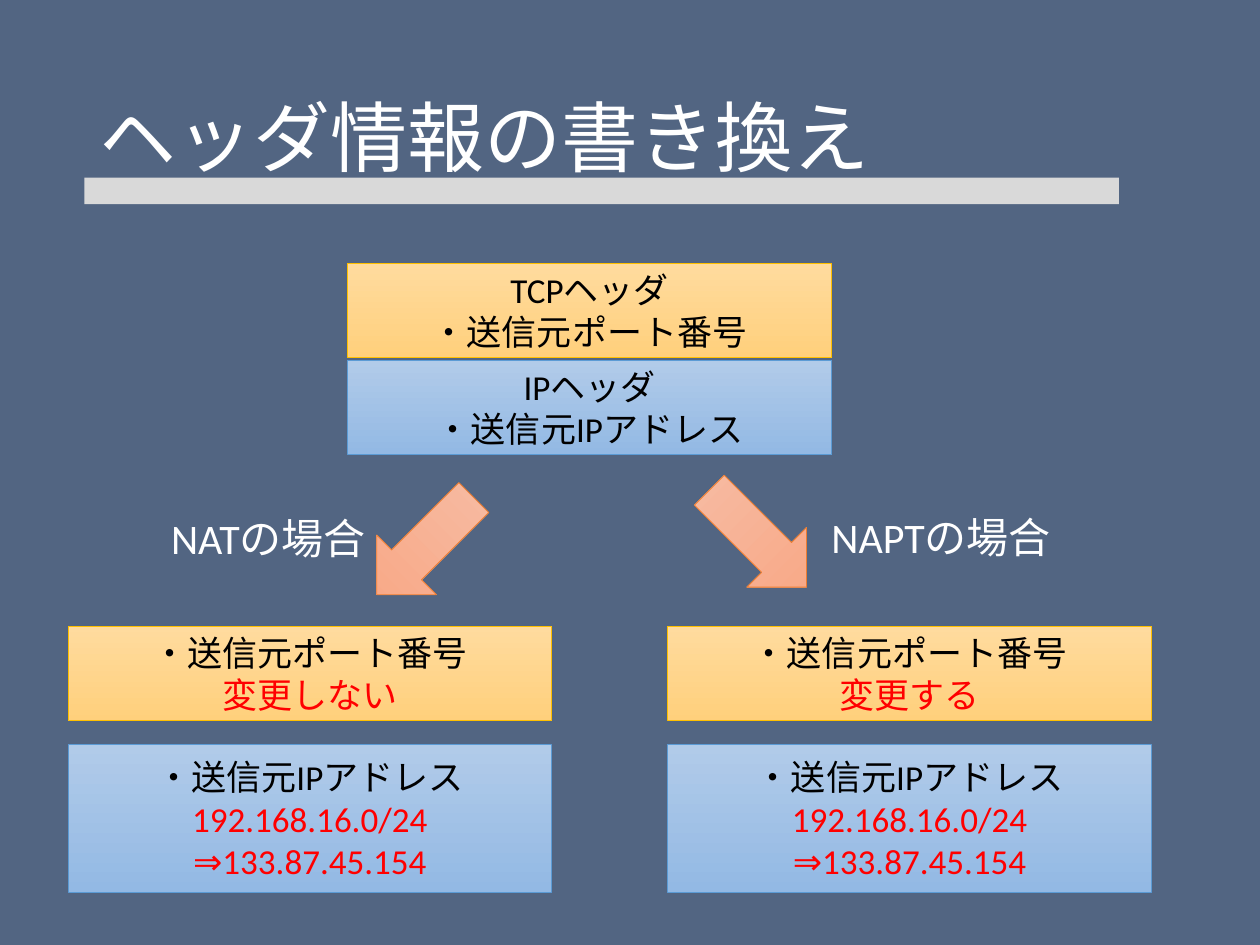
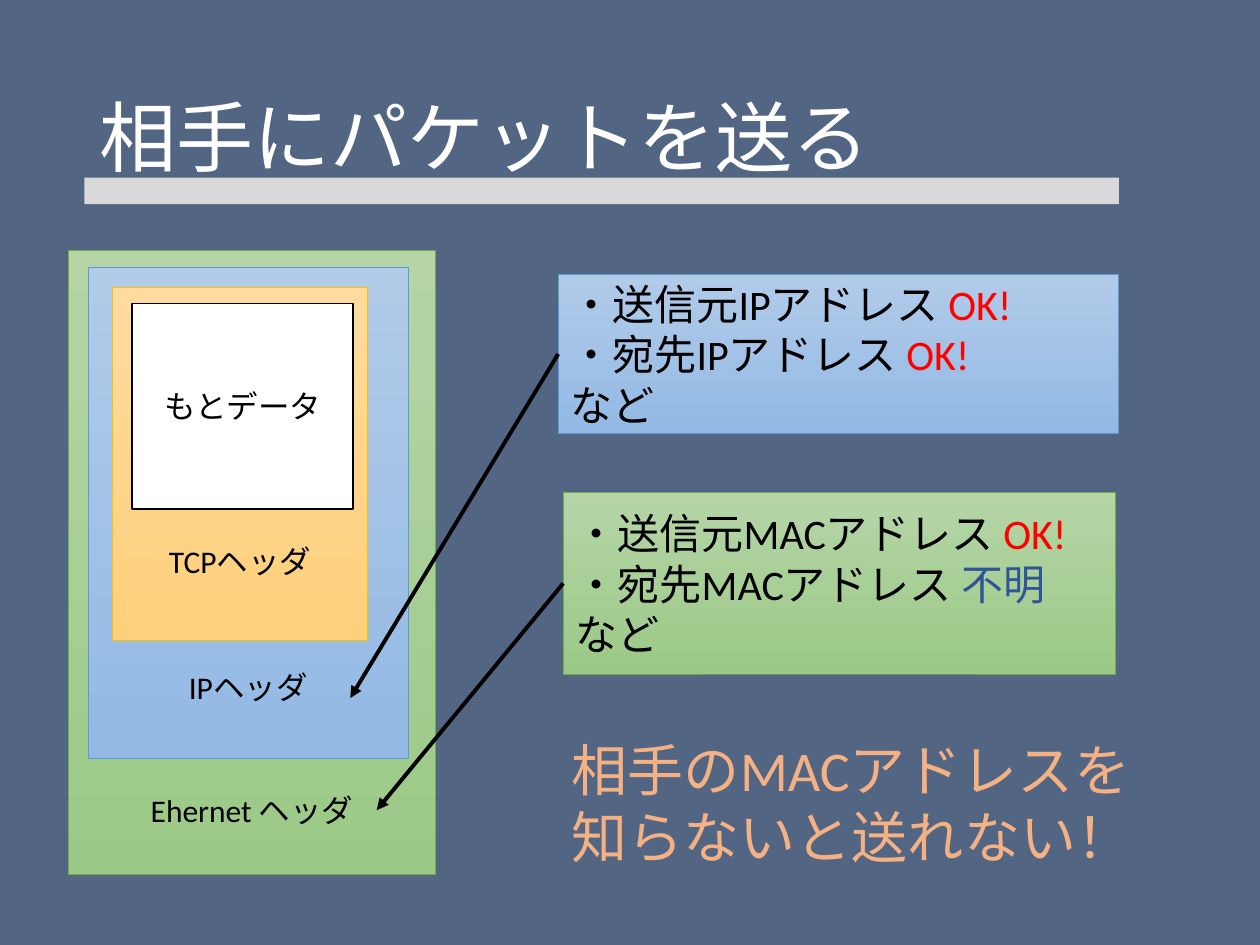
from dataclasses import dataclass

from lxml import etree
from pptx import Presentation
from pptx.dml.color import RGBColor
from pptx.enum.shapes import MSO_CONNECTOR, MSO_SHAPE
from pptx.enum.text import MSO_ANCHOR, PP_ALIGN
from pptx.oxml.ns import qn
from pptx.util import Inches, Pt

RECT, DOWN_ARROW = MSO_SHAPE.RECTANGLE, MSO_SHAPE.DOWN_ARROW
STRAIGHT = MSO_CONNECTOR.STRAIGHT
TOP, MIDDLE, BOTTOM = MSO_ANCHOR.TOP, MSO_ANCHOR.MIDDLE, MSO_ANCHOR.BOTTOM
LEFT, CENTER = PP_ALIGN.LEFT, PP_ALIGN.CENTER


@dataclass(frozen=True)
class Theme:
    font: str = "Calibri"
    background: str = "526582"
    band: str = "D9D9D9"
    white: str = "FFFFFF"
    black: str = "000000"
    changed: str = "FF0000"
    unknown: str = "2F5597"
    warning: str = "F4B183"
    tcp: tuple = ("FFDB9E", "FFD07C", "FFC000")
    ip: tuple = ("B1CBE9", "93B9E4", "5B9BD5")
    ethernet: tuple = ("B5D5A7", "9CC987", "70AD47")
    arrow: tuple = ("F7BDA5", "F8A582", "ED7D31")
    title_size: int = 44
    warning_size: int = 32
    detail_size: int = 24
    header_size: int = 20
    layer_size: int = 18


T = Theme()


def rgb(color):
    return RGBColor.from_string(color)


def write(sp, lines, size, color=T.black, align=LEFT, anchor=TOP):
    tf = sp.text_frame
    tf.word_wrap = True
    tf.vertical_anchor = anchor
    for i, line in enumerate(lines):
        p = tf.add_paragraph() if i else tf.paragraphs[0]
        p.alignment = align
        p.font.name = T.font
        p.font.size = Pt(size)
        p.font.color.rgb = rgb(color)
        for run in [line] if isinstance(line, str) else line:
            text, run_color = (run, color) if isinstance(run, str) else run
            r = p.add_run()
            r.text = text
            r.font.color.rgb = rgb(run_color)
    return tf


def add_text(s, box, lines, size, color, anchor=TOP):
    sp = s.shapes.add_textbox(*map(Inches, box))
    return write(sp, lines, size, color, anchor=anchor)


def add_plain(s, box, fill, line=None):
    sp = s.shapes.add_shape(RECT, *map(Inches, box))
    sp.shadow.inherit = False
    sp.fill.solid()
    sp.fill.fore_color.rgb = rgb(fill)
    if line:
        sp.line.color.rgb = rgb(line)
        sp.line.width = Pt(1)
    else:
        sp.line.fill.background()
    return sp


def add_gradient(s, box, colors, kind=RECT):
    start, end, line = colors
    sp = s.shapes.add_shape(kind, *map(Inches, box))
    sp.shadow.inherit = False
    sp.fill.gradient()
    sp.fill.gradient_angle = 270
    for stop, color in zip(sp.fill.gradient_stops, (start, end)):
        stop.color.rgb = rgb(color)
    sp.line.color.rgb = rgb(line)
    sp.line.width = Pt(0.5)
    return sp


def add_pointer(s, start, end):
    line = s.shapes.add_connector(STRAIGHT, *map(Inches, (*start, *end)))
    line.line.color.rgb = rgb(T.black)
    line.line.width = Pt(2.25)
    etree.SubElement(line.line._get_or_add_ln(), qn("a:tailEnd"), type="triangle")
    etree.SubElement(line._element.spPr, qn("a:effectLst"))


def add_titled_slide(prs, title):
    s = prs.slides.add_slide(prs.slide_layouts[6])
    s.background.fill.solid()
    s.background.fill.fore_color.rgb = rgb(T.background)
    tf = add_text(s, (0.69, 0.4, 8.62, 1.45), [title], T.title_size, T.white, MIDDLE)
    tf.paragraphs[0].line_spacing = 0.9
    add_plain(s, (0.67, 1.41, 8.21, 0.21), T.band)
    return s


def header_pair(s, box, tcp_lines, ip_lines, ip_height, gap):
    x, y, w, tcp_height = box
    ip_top = y + tcp_height + gap
    for top, height, colors, lines in (
        (y, tcp_height, T.tcp, tcp_lines),
        (ip_top, ip_height, T.ip, ip_lines),
    ):
        sp = add_gradient(s, (x, top, w, height), colors)
        write(sp, lines, T.header_size, align=CENTER, anchor=MIDDLE)


def case_branch(s, arrow_box, rotation, label_box, label):
    add_gradient(s, arrow_box, T.arrow, DOWN_ARROW).rotation = rotation
    add_text(s, label_box, [label], T.detail_size, T.white)


def layer_stack(s, box):
    x, y, w, h = box
    layers = (
        ((0, 0, w, h), T.ethernet, "Ehernet ヘッダ", 0.36),
        ((0.16, 0.13, 2.54, 3.9), T.ip, "IPヘッダ", 0.42),
        ((0.35, 0.29, 2.03, 2.8), T.tcp, "TCPヘッダ", 0.48),
    )
    for (dx, dy, width, height), colors, label, inset in layers:
        sp = add_gradient(s, (x + dx, y + dy, width, height), colors)
        tf = write(sp, [label], T.layer_size, align=CENTER, anchor=BOTTOM)
        tf.margin_bottom = Inches(inset)
    data = add_plain(s, (x + 0.51, y + 0.42, 1.75, 1.63), T.white, T.black)
    write(data, ["もとデータ"], T.layer_size, align=CENTER, anchor=MIDDLE)


def address_detail(s, box, colors, protocol, destination_state, target):
    x, y, w, h = box
    lines = [
        [f"・送信元{protocol}アドレス ", ("OK!", T.changed)],
        [f"・宛先{protocol}アドレス ", destination_state],
        "など",
    ]
    sp = add_gradient(s, box, colors)
    write(sp, lines, T.detail_size, anchor=MIDDLE)
    add_pointer(s, (x, y + h / 2), target)


def rewrite_slide(prs):
    s = add_titled_slide(prs, "ヘッダ情報の書き換え")
    port, address = "・送信元ポート番号", "・送信元IPアドレス"
    header_pair(s, (2.76, 2.09, 3.84, 0.75), ["TCPヘッダ", port],
                ["IPヘッダ", address], 0.75, 0.02)
    case_branch(s, (3.04, 3.79, 0.67, 1.09), 45, (1.26, 4.02, 2.48, 0.5), "NATの場合")
    case_branch(s, (5.68, 3.73, 0.67, 1.09), 315, (6.5, 4.01, 2.48, 0.5), "NAPTの場合")
    translated = [
        address,
        [("192.168.16.0/24", T.changed)],
        [("⇒133.87.45.154", T.changed)],
    ]
    for x, result in ((0.54, "変更しない"), (5.3, "変更する")):
        header_pair(s, (x, 4.97, 3.84, 0.75), [port, [(result, T.changed)]],
                    translated, 1.17, 0.19)


def packet_slide(prs):
    s = add_titled_slide(prs, "相手にパケットを送る")
    layer_stack(s, (0.54, 1.99, 2.92, 4.95))
    address_detail(s, (4.43, 2.18, 4.45, 1.26), T.ip, "IP",
                   ("OK!", T.changed), (2.78, 5.54))
    address_detail(s, (4.47, 3.91, 4.38, 1.44), T.ethernet, "MAC",
                   ("不明", T.unknown), (2.99, 6.43))
    add_text(s, (4.44, 5.79, 4.95, 1.18),
             ["相手のMACアドレスを知らないと送れない！"], T.warning_size, T.warning)


def main():
    prs = Presentation()
    prs.slide_width, prs.slide_height = Inches(10), Inches(7.5)
    rewrite_slide(prs)
    packet_slide(prs)
    prs.save("out.pptx")


if __name__ == "__main__":
    main()
